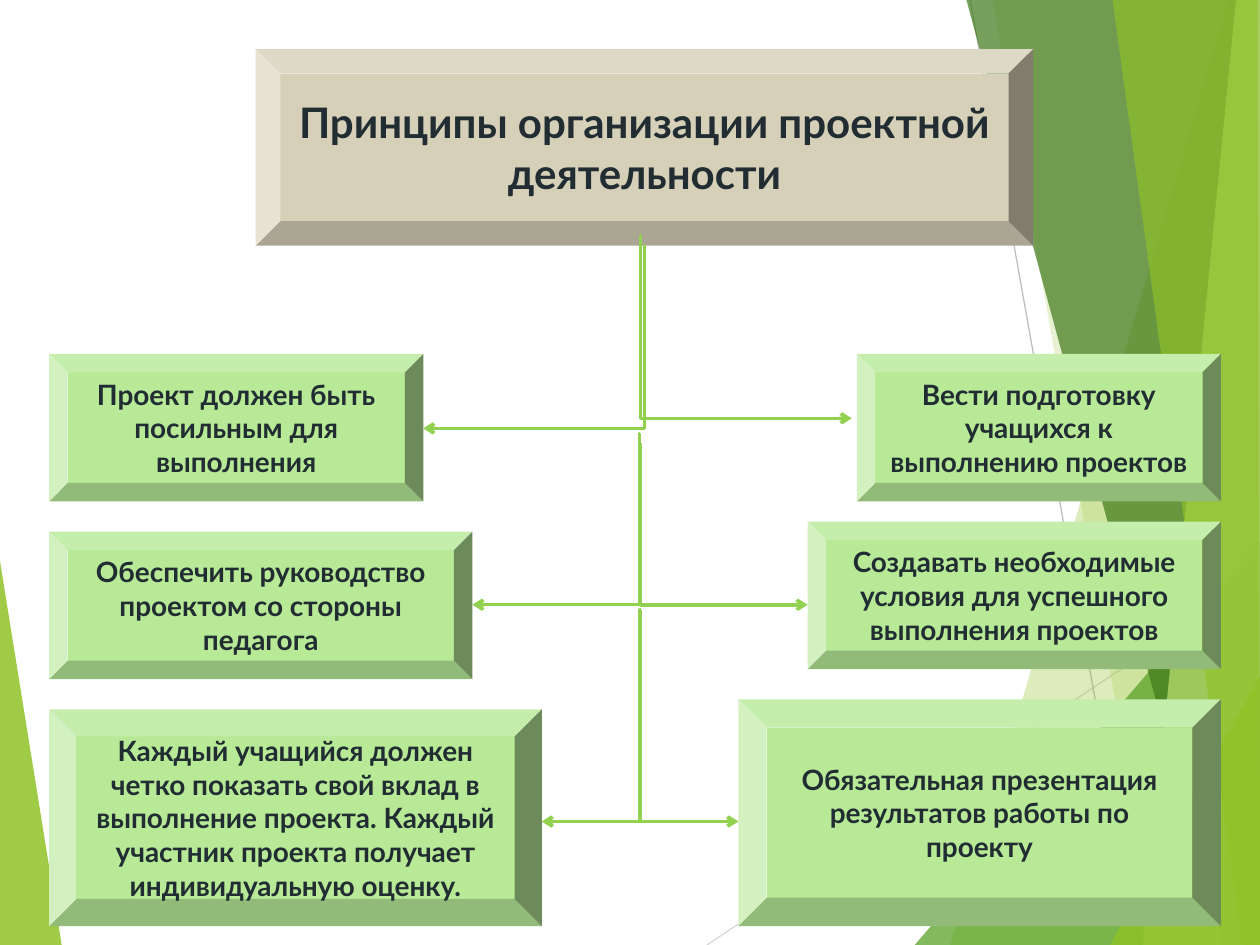
import pptx
import pptx.dml.color
import pptx.enum.shapes
import pptx.enum.text
import pptx.oxml.ns
import pptx.oxml.xmlchemy
import pptx.util
from pptx.util import Inches

COLORS = {
    "lime": "90C226", "green": "54A021", "forest": "3F7819", "pale": "C0E474",
    "gray": "BFBFBF", "light_gray": "D9D9D9", "arrow": "92D050",
    "title": "D6D0B8", "box": "B7E996", "text": "212D32",
}
FONT = {"name": "Lato", "bold": True}
FRAME = {"word_wrap": True, "vertical_anchor": pptx.enum.text.MSO_ANCHOR.MIDDLE}

LEFT_FACET = ("lime", 85, [(-0.01, 4.39), (0.49, 7.5), (-0.01, 7.5)])
RAYS = [
    ("light_gray", (5.61, 7.5), (10.01, 4.57)),
    ("gray", (7.7, 0), (9.04, 7.5)),
]
RIGHT_FACETS = [
    ("lime", 30, [(9.75, 0), (7.54, 7.5), (10.01, 7.5), (10.01, 0)]),
    ("lime", 20, [(7.88, 0), (9.19, 7.5), (10.01, 7.5), (10.01, 0)]),
    ("green", 72, [(7.26, 7.5), (10.01, 4.29), (10.01, 7.5)]),
    ("forest", 70, [(7.67, 0), (9.7, 7.5), (10.01, 7.5), (10.01, 0)]),
    ("pale", 70, [(9.81, 0), (9.07, 7.5), (10.01, 7.5), (10.01, 0)]),
    ("lime", 65, [(8.83, 0), (9.86, 7.5), (10, 7.5), (9.98, 0)]),
    ("lime", 80, [(8.81, 7.5), (10.01, 5.35), (10.01, 7.5)]),
]
TITLE = ("Принципы организации проектной деятельности", 2.03, 0.39, 6.17, 1.56)
LEFT_EDGE, RIGHT_EDGE = 0.39, 9.69
LEFT_BOXES = [
    ("Проект должен быть посильным для выполнения", 2.81, 2.97, 1.17),
    ("Обеспечить руководство проектом со стороны педагога", 4.22, 3.36, 1.17),
    ("Каждый учащийся должен четко показать свой вклад в выполнение проекта. "
     "Каждый участник проекта получает индивидуальную оценку.", 5.63, 3.91, 1.72),
]
RIGHT_BOXES = [
    ("Вести подготовку учащихся к выполнению проектов", 2.81, 2.89, 1.17),
    ("Создавать необходимые условия для успешного выполнения проектов", 4.14, 3.28, 1.17),
    ("Обязательная презентация результатов работы по проекту", 5.55, 3.83, 1.8),
]
ARROWS = [
    ((5.12, 1.95), (3.36, 3.4)), ((5.08, 1.87), (6.76, 3.32)),
    ((5.08, 3.44), (3.75, 4.8)), ((5.08, 3.52), (6.41, 4.8)),
    ((5.08, 4.84), (4.3, 6.52)), ((5.08, 4.92), (5.86, 6.52)),
]


def rgb(name):
    return pptx.dml.color.RGBColor.from_string(COLORS[name])


def apply(obj, values):
    for key, value in values.items():
        setattr(obj, key, value)


def find(element, tag):
    return element.find(".//" + pptx.oxml.ns.qn(tag))


def add_child(parent, tag, **attrs):
    child = pptx.oxml.xmlchemy.OxmlElement(tag)
    for key, value in attrs.items():
        child.set(key, value)
    parent.append(child)


def paint(sp, color):
    sp.shadow.inherit = False
    sp.fill.solid()
    sp.fill.fore_color.rgb = rgb(color)
    sp.line.fill.background()


def add_facet(s, color, alpha, points):
    corners = [(Inches(x), Inches(y)) for x, y in points]
    builder = s.shapes.build_freeform(*corners[0])
    builder.add_line_segments(corners[1:], close=True)
    sp = builder.convert_to_shape()
    paint(sp, color)
    add_child(find(sp._element.spPr, "a:srgbClr"), "a:alpha", val=str(alpha * 1000))


def add_line(s, kind, start, end, color, width):
    ends = [Inches(v) for v in (*start, *end)]
    line = s.shapes.add_connector(kind, *ends)
    line.line.color.rgb = rgb(color)
    line.line.width = pptx.util.Pt(width)
    add_child(line._element.spPr, "a:effectLst")
    return line


def add_elbow_arrow(s, start, end):
    kind = pptx.enum.shapes.MSO_CONNECTOR.ELBOW
    spPr = add_line(s, kind, start, end, "arrow", 2)._element.spPr
    add_child(find(spPr, "a:avLst"), "a:gd", name="adj1", fmla="val 300")
    add_child(find(spPr, "a:ln"), "a:tailEnd", type="arrow")


def add_bevel(s, text, left, top, width, height, color="box", size=16):
    kind = pptx.enum.shapes.MSO_SHAPE.BEVEL
    sp = s.shapes.add_shape(kind, *[Inches(v) for v in (left, top, width, height)])
    paint(sp, color)
    tf = sp.text_frame
    apply(tf, FRAME)
    p = tf.paragraphs[0]
    p.alignment = pptx.enum.text.PP_ALIGN.CENTER
    r = p.add_run()
    r.text = text
    apply(r.font, {**FONT, "size": pptx.util.Pt(size)})
    r.font.color.rgb = rgb("text")


def main():
    prs = pptx.Presentation()
    apply(prs, {"slide_width": Inches(10), "slide_height": Inches(7.5)})
    s = prs.slides.add_slide(prs.slide_layouts[6])

    add_facet(s, *LEFT_FACET)
    for color, start, end in RAYS:
        add_line(s, pptx.enum.shapes.MSO_CONNECTOR.STRAIGHT, start, end, color, 0.75)
    for facet in RIGHT_FACETS:
        add_facet(s, *facet)

    add_bevel(s, *TITLE, color="title", size=24)
    for text, top, width, height in LEFT_BOXES:
        add_bevel(s, text, LEFT_EDGE, top, width, height)
    for text, top, width, height in RIGHT_BOXES:
        add_bevel(s, text, RIGHT_EDGE - width, top, width, height)
    for start, end in ARROWS:
        add_elbow_arrow(s, start, end)

    prs.save("out.pptx")


if __name__ == "__main__":
    main()
